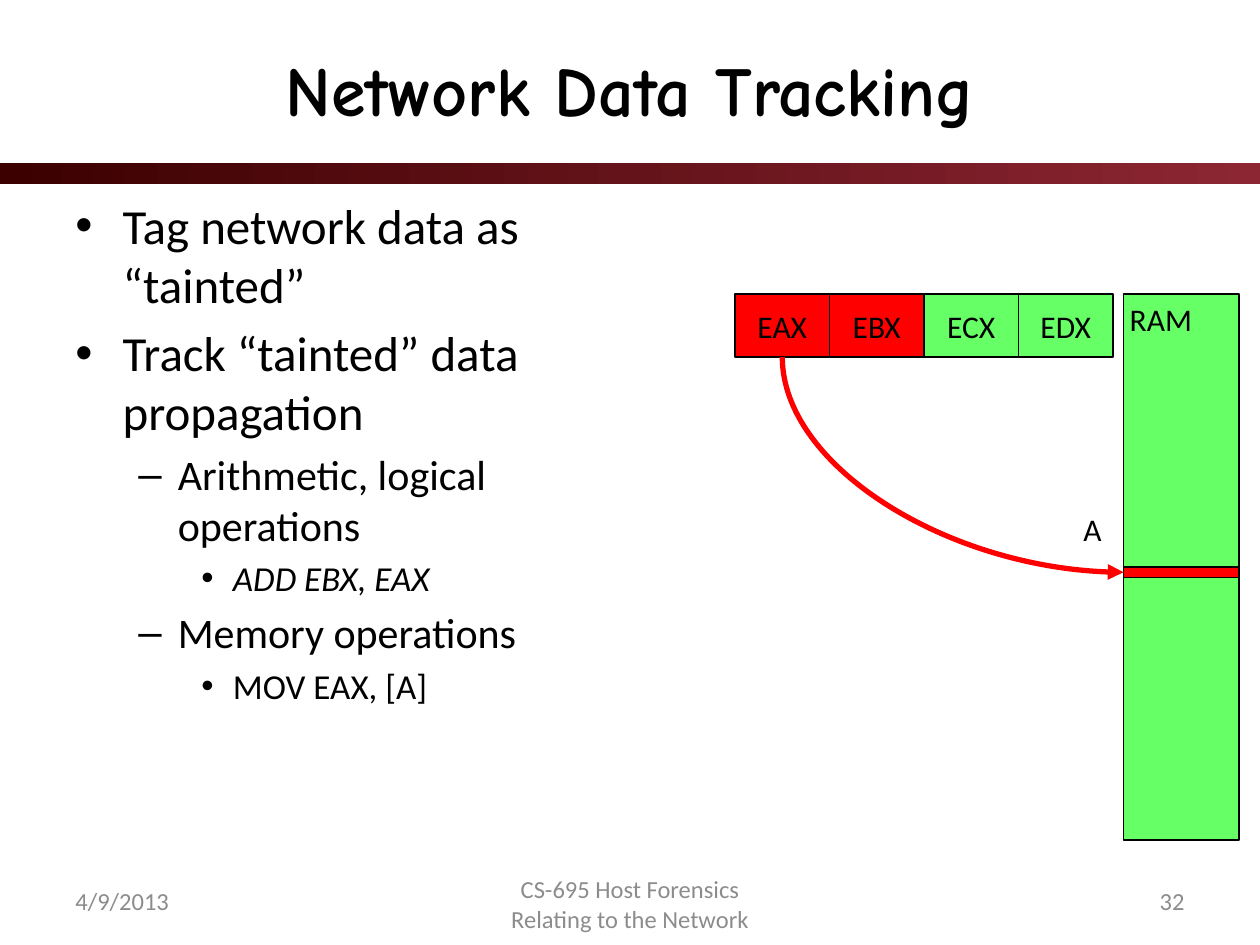
from lxml.etree import SubElement
from pptx import Presentation
from pptx.dml.color import RGBColor
from pptx.enum.shapes import MSO_CONNECTOR, MSO_SHAPE
from pptx.enum.text import MSO_ANCHOR, PP_ALIGN
from pptx.oxml.ns import qn
from pptx.util import Pt

BLACK = RGBColor(0x00, 0x00, 0x00)
GREY = RGBColor(0x8C, 0x8C, 0x8C)
RED = RGBColor(0xFF, 0x00, 0x00)
GREEN = RGBColor(0x66, 0xFF, 0x66)
MAROON_DARK = RGBColor(0x3C, 0x00, 0x00)
MAROON = RGBColor(0x8C, 0x26, 0x33)

# Per level: left margin, hanging indent, bullet, text size
LEVELS = [(27, 27, "•", 28), (58.5, 22.5, "–", 24), (90, 18, "•", 20)]
BULLETS = [
    (0, "Tag network data as “tainted”", False),
    (0, "Track “tainted” data propagation", False),
    (1, "Arithmetic, logical operations", False),
    (2, "ADD EBX, EAX", True),
    (1, "Memory operations", False),
    (2, "MOV EAX, [A]", False),
]
REGISTERS = [("EAX", RED), ("EBX", RED), ("ECX", GREEN), ("EDX", GREEN)]


def style_runs(p, size, color=BLACK, font="Calibri", bold=False, italic=False):
    for r in p.runs:
        f = r.font
        f.name, f.size, f.bold, f.italic = font, Pt(size), bold, italic
        f.color.rgb = color


def add_text(slide, box, text, size, align=PP_ALIGN.LEFT,
             anchor=MSO_ANCHOR.MIDDLE, wrap=True, **style):
    tf = slide.shapes.add_textbox(*map(Pt, box)).text_frame
    tf.word_wrap = wrap
    tf.vertical_anchor = anchor
    p = tf.paragraphs[0]
    p.text = text
    p.alignment = align
    style_runs(p, size, **style)


def add_rect(slide, box, color, text=""):
    s = slide.shapes.add_shape(MSO_SHAPE.RECTANGLE, *map(Pt, box))
    s.shadow.inherit = False
    s.fill.solid()
    s.fill.fore_color.rgb = color
    s.line.color.rgb = BLACK
    s.line.width = Pt(0.75)
    if text:
        tf = s.text_frame
        tf.word_wrap = False
        tf.vertical_anchor = MSO_ANCHOR.MIDDLE
        p = tf.paragraphs[0]
        p.text = text
        p.alignment = PP_ALIGN.CENTER
        style_runs(p, 18)


def add_curved_arrow(slide, x1, y1, x2, y2):
    """Quarter curve that leaves downwards and arrives from the left."""
    w, h = x2 - x1, y2 - y1
    # The preset leaves sideways, so its frame is turned about the centre.
    left, top = (x1 + x2 - h) / 2, (y1 + y2 - w) / 2
    c = slide.shapes.add_connector(
        MSO_CONNECTOR.CURVE, Pt(left), Pt(top), Pt(left + h), Pt(top + w))
    c.line.color.rgb = RED
    c.line.width = Pt(3)
    sp_pr = c._element.spPr
    sp_pr.find(qn("a:prstGeom")).set("prst", "curvedConnector2")
    xfrm = sp_pr.find(qn("a:xfrm"))
    xfrm.set("rot", "16200000")
    xfrm.set("flipH", "1")
    SubElement(sp_pr.find(qn("a:ln")), qn("a:tailEnd"), type="triangle")
    SubElement(sp_pr, qn("a:effectLst"))


def add_header(slide, left, top, width, height):
    band_h = 12.24
    band = slide.shapes.add_shape(
        MSO_SHAPE.RECTANGLE, Pt(left), Pt(top + height - band_h), Pt(width), Pt(band_h))
    band.shadow.inherit = False
    band.line.fill.background()
    band.fill.gradient()
    band.fill.gradient_angle = 0
    for stop, color in zip(band.fill.gradient_stops, (MAROON_DARK, MAROON)):
        stop.color.rgb = color
    add_text(slide, (left + 36, top + 10.8, width - 72, 79.2), "Network Data Tracking",
             40, PP_ALIGN.CENTER, font="Comic Neue", bold=True)


def add_bullets(slide, box):
    tf = slide.shapes.add_textbox(*map(Pt, box)).text_frame
    tf.word_wrap = True
    for i, (level, text, italic) in enumerate(BULLETS):
        margin, hang, bullet, size = LEVELS[level]
        p = tf.paragraphs[0] if i == 0 else tf.add_paragraph()
        p.text = text
        p.level = level
        if i:
            p.space_before = Pt(0.2 * size)
        p_pr = p._p.get_or_add_pPr()
        p_pr.set("marL", str(Pt(margin)))
        p_pr.set("indent", str(-Pt(hang)))
        SubElement(p_pr, qn("a:buFont"), typeface="Arial")
        SubElement(p_pr, qn("a:buChar"), char=bullet)
        style_runs(p, size, italic=italic)


def add_memory_diagram(slide, left, top, width, height):
    reg_w, reg_h = 54, 36
    ram_w, cell_h = 66, 6
    ram_x, cell_y = left + width - ram_w, top + 156
    for i, (name, color) in enumerate(REGISTERS):
        add_rect(slide, (left + i * reg_w, top, reg_w, reg_h), color, name)
    add_rect(slide, (ram_x, top, ram_w, height), GREEN)
    add_rect(slide, (ram_x, cell_y, ram_w, cell_h), RED)
    add_text(slide, (ram_x - 3.5, top, 69, 36), "RAM", 18,
             anchor=MSO_ANCHOR.TOP, wrap=False)
    add_text(slide, (ram_x - 30, cell_y - 36, 31.5, 36), "A", 18,
             anchor=MSO_ANCHOR.TOP, wrap=False)
    add_curved_arrow(slide, left + reg_w / 2, top + reg_h, ram_x, cell_y + cell_h / 2)


def add_footer(slide, left, top, width, height):
    side_w, mid_w = 132, 179
    add_text(slide, (left, top, side_w, height), "4/9/2013", 14, color=GREY)
    add_text(slide, (left + (width - mid_w) / 2, top + 1.5, mid_w, height),
             "CS-695 Host Forensics\vRelating to the Network", 14,
             PP_ALIGN.CENTER, color=GREY)
    add_text(slide, (left + width - side_w, top, side_w, height), "32", 14,
             PP_ALIGN.RIGHT, color=GREY)


def main():
    prs = Presentation()
    prs.slide_width, prs.slide_height = Pt(720), Pt(540)
    slide = prs.slides.add_slide(prs.slide_layouts[6])
    add_header(slide, 0, 0, 720, 105.12)
    add_bullets(slide, (36, 108, 317, 384))
    add_memory_diagram(slide, 420, 168, 288, 312)
    add_footer(slide, 36, 500.5, 648, 28.75)
    prs.save("out.pptx")


if __name__ == "__main__":
    main()
